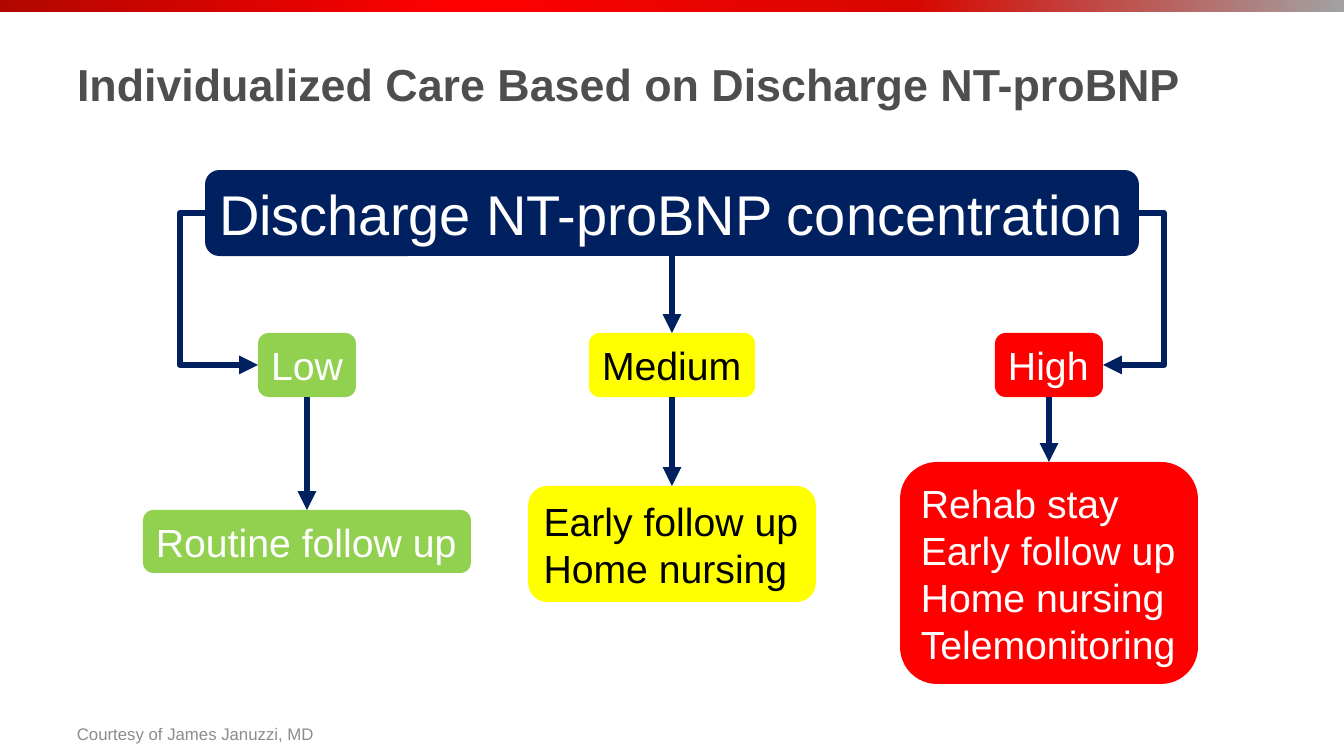
from lxml import etree
from pptx import Presentation
from pptx.dml.color import RGBColor
from pptx.enum.shapes import MSO_CONNECTOR as Connector, MSO_SHAPE as Shape
from pptx.enum.text import MSO_ANCHOR as Anchor, MSO_AUTO_SIZE as AutoSize, PP_ALIGN as Align
from pptx.oxml import parse_xml
from pptx.oxml.ns import nsdecls, qn
from pptx.util import Pt

NAVY = RGBColor(0x00, 0x20, 0x60)
GREEN = RGBColor(0x92, 0xD0, 0x50)
YELLOW = RGBColor(0xFF, 0xFF, 0x00)
RED = RGBColor(0xFF, 0x00, 0x00)
WHITE = RGBColor(0xFF, 0xFF, 0xFF)
BLACK = RGBColor(0x00, 0x00, 0x00)
TITLE_GRAY = RGBColor(0x4D, 0x4E, 0x4D)
NOTE_GRAY = RGBColor(0x8C, 0x8C, 0x8C)
BAR_STOPS = [
    (0, RGBColor(0xB1, 0x07, 0x00)),
    (14, RGBColor(0xD0, 0x04, 0x00)),
    (34, RED),
    (68, RGBColor(0xD7, 0x07, 0x00)),
    (100, RGBColor(0xA2, 0xA2, 0xA2)),
]

TITLE = "Individualized Care Based on Discharge NT-proBNP"
CREDIT = "Courtesy of James Januzzi, MD"
HEADER = "Discharge NT-proBNP concentration"
BRANCHES = [
    dict(level="Low", center=307, level_width=98, fill=GREEN, color=WHITE, side=1,
         actions=["Routine follow up"], actions_box=(510, 328, 63)),
    dict(level="Medium", center=672, level_width=166, fill=YELLOW, color=BLACK, side=None,
         actions=["Early follow up", "Home nursing"], actions_box=(486, 288, 116)),
    dict(level="High", center=1049, level_width=108, fill=RED, color=WHITE, side=3,
         actions=["Rehab stay", "Early follow up", "Home nursing", "Telemonitoring"],
         actions_box=(462, 298, 222)),
]

SLIDE_WIDTH, SLIDE_HEIGHT = 1344, 756
LEVEL_TOP, LEVEL_HEIGHT = 333, 64
ELBOW_REACH = 25
TOP, BOTTOM = 0, 2


def px(length):
    return round(length * 914400 / 100.8)


def set_text(shape, lines, size, color, bold=False, anchor=Anchor.MIDDLE, wrap=True):
    frame = shape.text_frame
    frame.word_wrap = wrap
    frame.vertical_anchor = anchor
    frame.auto_size = AutoSize.NONE if wrap else AutoSize.SHAPE_TO_FIT_TEXT
    for index, line in enumerate(lines):
        paragraph = frame.add_paragraph() if index else frame.paragraphs[0]
        paragraph.alignment = Align.LEFT
        run = paragraph.add_run()
        run.text = line
        run.font.name = "Arial"
        run.font.size = Pt(size)
        run.font.bold = bold
        run.font.color.rgb = color


def add_box(slide, lines, center, top, width, height, fill, color, size=28):
    box = slide.shapes.add_shape(Shape.ROUNDED_RECTANGLE, px(center - width / 2), px(top),
                                 px(width), px(height))
    box.shadow.inherit = False
    box.fill.solid()
    box.fill.fore_color.rgb = fill
    box.line.fill.background()
    set_text(box, lines, size, color, wrap=False)
    return box


def add_arrow(slide, source, source_site, target, target_site, kind=Connector.STRAIGHT):
    arrow = slide.shapes.add_connector(kind, 0, 0, 0, 0)
    arrow.begin_connect(source, source_site)
    arrow.end_connect(target, target_site)
    arrow.line.color.rgb = NAVY
    arrow.line.width = Pt(4.5)
    properties = arrow._element.spPr
    etree.SubElement(properties.find(qn("a:ln")), qn("a:tailEnd"), type="triangle")
    etree.SubElement(properties, qn("a:effectLst"))
    if kind == Connector.ELBOW:
        bend = round(-100000 * px(ELBOW_REACH) / arrow.width)
        geometry = properties.find(qn("a:prstGeom"))
        adjustments = geometry.find(qn("a:avLst"))
        if adjustments is None:
            adjustments = etree.SubElement(geometry, qn("a:avLst"))
        etree.SubElement(adjustments, qn("a:gd"), name="adj1", fmla=f"val {bend}")


def add_top_bar(slide):
    bar = slide.shapes.add_shape(Shape.RECTANGLE, 0, 0, px(SLIDE_WIDTH), px(12))
    bar.shadow.inherit = False
    bar.line.fill.background()
    bar.fill.gradient()
    bar.fill.gradient_angle = 0
    stops = bar._element.spPr.find(qn("a:gradFill")).find(qn("a:gsLst"))
    for stop in list(stops):
        stops.remove(stop)
    for position, color in BAR_STOPS:
        stops.append(parse_xml(f'<a:gs {nsdecls("a")} pos="{position * 1000}">'
                               f'<a:srgbClr val="{color}"/></a:gs>'))


def main():
    presentation = Presentation()
    presentation.slide_width = px(SLIDE_WIDTH)
    presentation.slide_height = px(SLIDE_HEIGHT)
    slide = presentation.slides.add_slide(presentation.slide_layouts[5])
    add_top_bar(slide)

    title = slide.shapes.title
    title.left, title.top, title.width, title.height = map(px, (67, 7, 1184, 153))
    set_text(title, [TITLE], 32, TITLE_GRAY, bold=True)
    credit = slide.shapes.add_textbox(px(67), px(701), px(994), px(48))
    set_text(credit, [CREDIT], 12, NOTE_GRAY, anchor=Anchor.BOTTOM)

    header = add_box(slide, [HEADER], SLIDE_WIDTH / 2, 170, 934, 86, NAVY, WHITE, size=40)
    for branch in BRANCHES:
        center, fill, color, side = (branch[key] for key in ("center", "fill", "color", "side"))
        level = add_box(slide, [branch["level"]], center, LEVEL_TOP, branch["level_width"],
                        LEVEL_HEIGHT, fill, color)
        actions = add_box(slide, branch["actions"], center, *branch["actions_box"], fill, color)
        if side is None:
            add_arrow(slide, header, BOTTOM, level, TOP)
        else:
            add_arrow(slide, header, side, level, side, Connector.ELBOW)
        add_arrow(slide, level, BOTTOM, actions, TOP)

    presentation.save("out.pptx")


if __name__ == "__main__":
    main()
